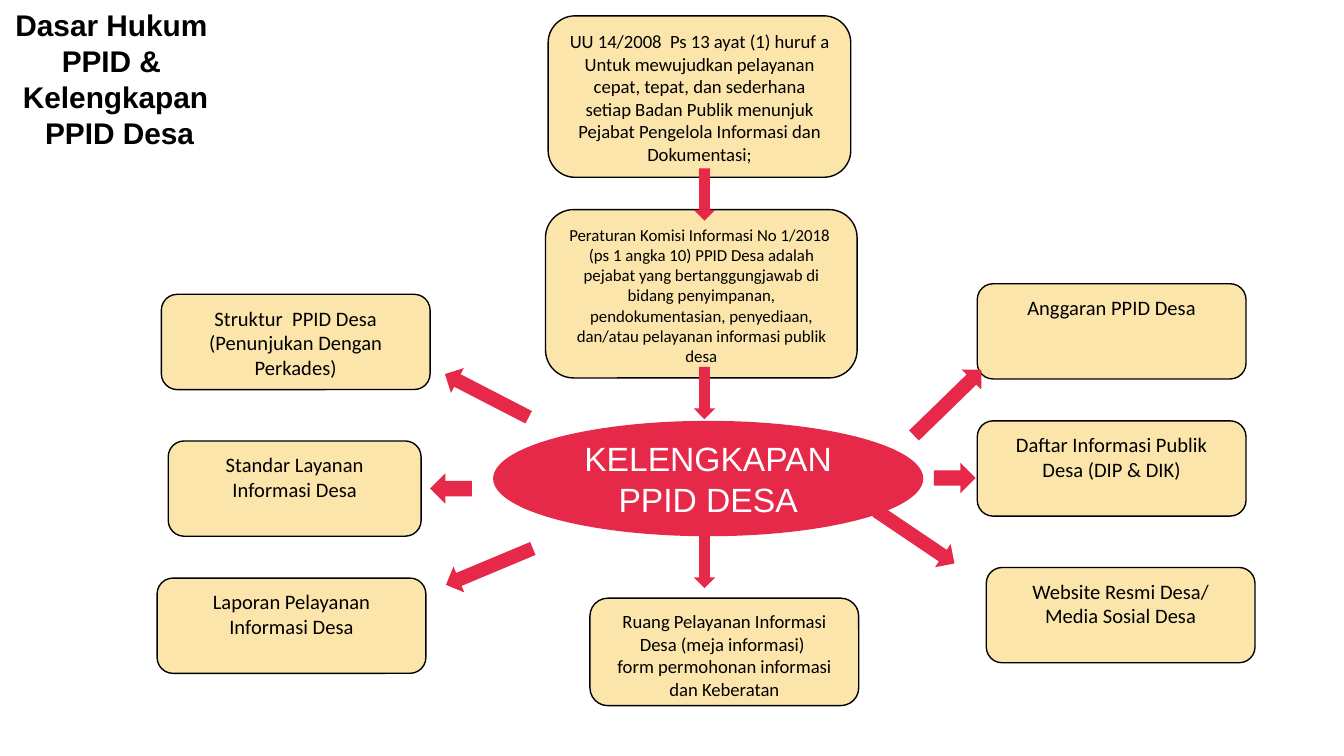
"""Build the slide on the legal basis and kit of a village PPID."""
from pptx import Presentation
from pptx import util as u
from pptx.dml import color
from pptx.enum import shapes, text

HUES = {"red": "E62949", "sand": "FBE5AB", "ink": "000000", "snow": "FFFFFF"}
KIND = shapes.MSO_SHAPE
TOP, MID = text.MSO_ANCHOR.TOP, text.MSO_ANCHOR.MIDDLE


def hue(name):
    """Return the named colour."""
    return color.RGBColor.from_string(HUES[name])


def write(shape, words, size, face="Calibri", ink="ink", anchor=TOP, bold=False):
    """Fill a shape with centred lines of text."""
    frame = shape.text_frame
    frame.text = words
    form = {"word_wrap": True, "auto_size": text.MSO_AUTO_SIZE.NONE,
            "vertical_anchor": anchor}
    for key, val in form.items():
        setattr(frame, key, val)
    for para in frame.paragraphs:
        para.alignment = text.PP_ALIGN.CENTER
        for key, val in {"name": face, "size": u.Pt(size), "bold": bold}.items():
            setattr(para.font, key, val)
        para.font.color.rgb = hue(ink)


def draw(slide, kind, box, fill, turn=0):
    """Add a flat shape without an outline."""
    shape = slide.shapes.add_shape(kind, *map(u.Cm, box))
    shape.shadow.inherit = False
    shape.fill.solid()
    shape.fill.fore_color.rgb = hue(fill)
    shape.line.fill.background()
    shape.rotation = turn
    return shape


def card(slide, box, words, size=11):
    """Add an outlined sand card."""
    shape = draw(slide, KIND.ROUNDED_RECTANGLE, box, "sand")
    shape.line.color.rgb = hue("ink")
    shape.line.width = u.Pt(0.75)
    write(shape, words, size)


def head(slide, box):
    """Place the title in its box."""
    title = slide.shapes.title
    for key, val in zip(("left", "top", "width", "height"), box):
        setattr(title, key, u.Cm(val))
    write(title, "Dasar Hukum \nPPID & \nKelengkapan\n PPID Desa", 16, "Arial", bold=True)


def spine(slide, x, y):
    """Place the hub, the two laws and the service room with down arrows."""
    hub = draw(slide, KIND.OVAL, (x, y + 7.65, 8.13, 2.18), "red")
    write(hub, "KELENGKAPAN\nPPID DESA", 18, "Arial", "snow", MID)
    cards = (
        (1.04, 0, 5.72, 3.05, 10,
         "UU 14/2008  Ps 13 ayat (1) huruf a Untuk mewujudkan pelayanan cepat, "
         "tepat, dan sederhana setiap Badan Publik menunjuk Pejabat Pengelola "
         "Informasi dan Dokumentasi;"),
        (0.99, 3.66, 5.89, 3.18, 9,
         "Peraturan Komisi Informasi No 1/2018  (ps 1 angka 10) PPID Desa adalah "
         "pejabat yang bertanggungjawab di bidang penyimpanan, pendokumentasian, "
         "penyediaan, dan/atau pelayanan informasi publik desa"),
        (1.83, 11, 5.08, 2.03, 10,
         "Ruang Pelayanan Informasi Desa (meja informasi) \n"
         "form permohonan informasi dan Keberatan"),
    )
    for dx, dy, wide, high, size, words in cards:
        card(slide, (x + dx, y + dy, wide, high), words, size)
    for dy in (2.88, 6.63, 9.82):
        draw(slide, KIND.DOWN_ARROW, (x + 3.79, y + dy, 0.41, 0.99), "red")


def side(slide, x, y, cards, slants, flat):
    """Place one column of cards with two slanted arrows and a flat one."""
    for dx, dy, wide, words in cards:
        card(slide, (x + dx, y + dy, wide, 1.8), words)
    for dx, dy, turn in slants:
        draw(slide, KIND.LEFT_ARROW, (x + dx, y + dy, 1.78, 0.53), "red", turn)
    kind, dx, dy = flat
    draw(slide, kind, (x + dx, y + dy, 0.79, 0.58), "red")


def main():
    """Build and save the slide."""
    deck = Presentation()
    deck.slide_width, deck.slide_height = u.Cm(25.4), u.Cm(14.28)
    slide = deck.slides.add_slide(deck.slide_layouts[5])
    head(slide, (0, 0, 4.37, 3))
    spine(slide, 9.32, 0.3)
    side(slide, 2.97, 5.56,
         ((0.08, 0, 5.08, "Struktur  PPID Desa\n(Penunjukan Dengan Perkades)"),
          (0.21, 2.77, 4.78, "Standar Layanan Informasi Desa"),
          (0, 5.36, 5.08, "Laporan Pelayanan Informasi Desa")),
         ((5.34, 1.65, 27.3), (5.39, 4.88, 337.3)),
         (KIND.LEFT_ARROW, 5.16, 3.38))
    side(slide, 16.41, 5.36,
         ((2.06, 0, 5.08, "Anggaran PPID Desa"),
          (2.06, 2.59, 5.08, "Daftar Informasi Publik Desa (DIP & DIK)"),
          (2.23, 5.36, 5.08, "Website Resmi Desa/ Media Sosial Desa")),
         ((0.61, 1.98, 135.8), (0, 4.52, 214)),
         (KIND.RIGHT_ARROW, 1.24, 3.38))
    deck.save("out.pptx")


if __name__ == "__main__":
    main()
